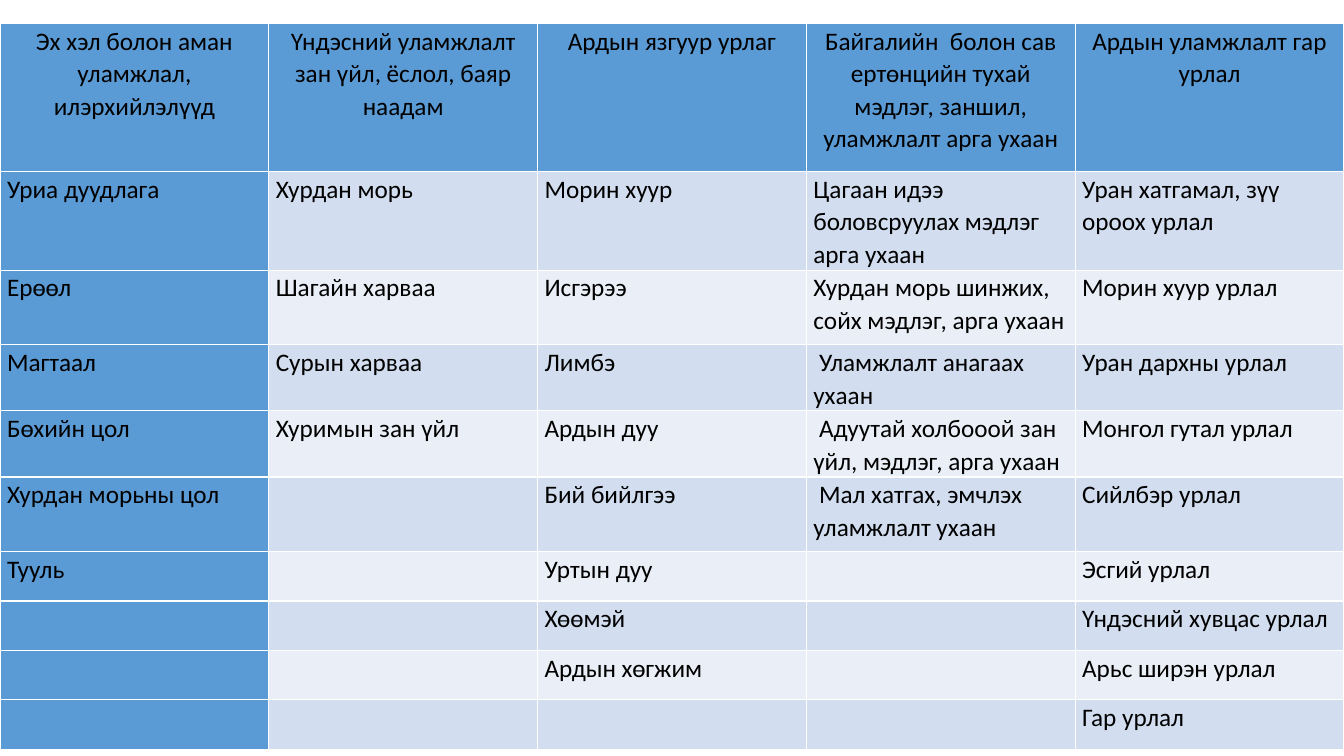
import pptx
import pptx.dml.color
import pptx.enum.text
import pptx.oxml
import pptx.oxml.ns
import pptx.util
from pptx.dml.color import RGBColor
from pptx.util import Inches

BLACK = RGBColor(0x00, 0x00, 0x00)
WHITE = RGBColor(0xFF, 0xFF, 0xFF)
HEADING_BLUE = RGBColor(0x5B, 0x9B, 0xD5)
BAND_DARK = RGBColor(0xD2, 0xDE, 0xEF)
BAND_LIGHT = RGBColor(0xEA, 0xEF, 0xF7)

SLIDE_WIDTH = 13.33
SLIDE_HEIGHT = 7.5
TABLE_TOP = 0.23
ROW_HEIGHTS = (1.47, 0.71, 0.74, 0.49, 0.57, 0.74, 0.49, 0.49, 0.49, 0.49)

HERITAGE = (
    ("Эх хэл болон аман уламжлал, илэрхийлэлүүд",
     "Үндэсний уламжлалт зан үйл, ёслол, баяр наадам",
     "Ардын язгуур урлаг",
     "Байгалийн  болон сав ертөнцийн тухай мэдлэг, заншил, уламжлалт арга ухаан",
     "Ардын уламжлалт гар урлал"),
    ("Уриа дуудлага", "Хурдан морь", "Морин хуур",
     "Цагаан идээ боловсруулах мэдлэг арга ухаан", "Уран хатгамал, зүү ороох урлал"),
    ("Ерөөл", "Шагайн харваа", "Исгэрээ",
     "Хурдан морь шинжих, сойх мэдлэг, арга ухаан", "Морин хуур урлал"),
    ("Магтаал", "Сурын харваа", "Лимбэ",
     " Уламжлалт анагаах ухаан", "Уран дархны урлал"),
    ("Бөхийн цол", "Хуримын зан үйл", "Ардын дуу",
     " Адуутай холбооой зан үйл, мэдлэг, арга ухаан", "Монгол гутал урлал"),
    ("Хурдан морьны цол", "", "Бий бийлгээ",
     " Мал хатгах, эмчлэх уламжлалт ухаан", "Сийлбэр урлал"),
    ("Тууль", "", "Уртын дуу", "", "Эсгий урлал"),
    ("", "", "Хөөмэй", "", "Үндэсний хувцас урлал"),
    ("", "", "Ардын хөгжим", "", "Арьс ширэн урлал"),
    ("", "", "", "", "Гар урлал"),
)

CELL_FORMAT = {
    "margin_left": Inches(0.07),
    "margin_top": Inches(0.01),
    "margin_right": Inches(0.07),
    "margin_bottom": Inches(0),
}
FONT_FORMAT = {"name": "Calibri", "size": pptx.util.Pt(18), "bold": False}


def apply_format(target, values):
    for name, value in values.items():
        setattr(target, name, value)


def add_borders(cell):
    properties = cell._tc.get_or_add_tcPr()
    for side in ("lnL", "lnR", "lnT", "lnB"):
        properties.append(pptx.oxml.parse_xml(
            f'<a:{side} {pptx.oxml.ns.nsdecls("a")} w="{pptx.util.Pt(1)}">'
            f'<a:solidFill><a:srgbClr val="{WHITE}"/></a:solidFill></a:{side}>'))


def cell_color(row, column):
    if row == 0 or column == 0:
        return HEADING_BLUE
    return BAND_DARK if row % 2 else BAND_LIGHT


def fill_cell(cell, text, color, alignment):
    apply_format(cell, CELL_FORMAT)
    add_borders(cell)
    cell.fill.solid()
    cell.fill.fore_color.rgb = color
    if text:
        paragraph = cell.text_frame.paragraphs[0]
        apply_format(paragraph, {"alignment": alignment, "line_spacing": 1.06})
        run = paragraph.add_run()
        run.text = text
        apply_format(run.font, FONT_FORMAT)
        run.font.color.rgb = BLACK


def add_heritage_table(slide):
    column_count = len(HERITAGE[0])
    table = slide.shapes.add_table(
        len(HERITAGE), column_count, Inches(0), Inches(TABLE_TOP),
        Inches(SLIDE_WIDTH), Inches(sum(ROW_HEIGHTS))).table
    table.first_col = True
    for column in table.columns:
        column.width = Inches(SLIDE_WIDTH / column_count)
    for row, height in zip(table.rows, ROW_HEIGHTS):
        row.height = Inches(height)
    alignments = pptx.enum.text.PP_ALIGN
    for row, texts in enumerate(HERITAGE):
        alignment = alignments.LEFT if row else alignments.CENTER
        for column, text in enumerate(texts):
            fill_cell(table.cell(row, column), text, cell_color(row, column), alignment)


def main():
    presentation = pptx.Presentation()
    presentation.slide_width = Inches(SLIDE_WIDTH)
    presentation.slide_height = Inches(SLIDE_HEIGHT)
    slide = presentation.slides.add_slide(presentation.slide_layouts[6])
    add_heritage_table(slide)
    presentation.save("out.pptx")


if __name__ == "__main__":
    main()
